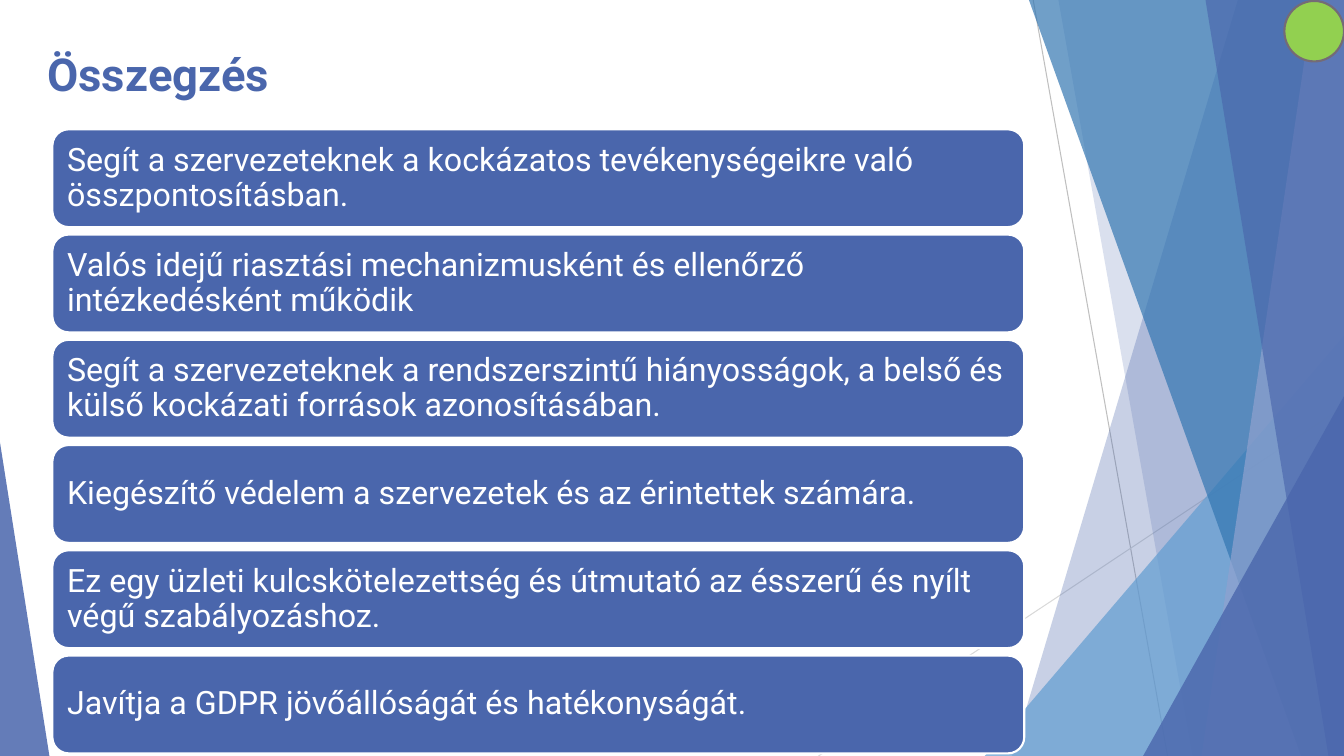
from dataclasses import dataclass
from lxml.etree import SubElement
from pptx import Presentation
from pptx.dml.color import RGBColor
from pptx.enum.shapes import MSO_CONNECTOR, MSO_SHAPE
from pptx.enum.text import MSO_ANCHOR, MSO_AUTO_SIZE, PP_ALIGN
from pptx.oxml.ns import qn
from pptx.util import Inches, Pt


@dataclass
class Theme:
    font: str = "Roboto"
    title_size: float = 32.4
    card_size: float = 23
    indigo: str = "4A66AC"
    lavender: str = "90A2CF"
    ocean: str = "3477B2"
    sky: str = "629DD1"
    green: str = "92D050"
    badge_edge: str = "746B76"
    grey: str = "BFBFBF"
    pale_grey: str = "D9D9D9"
    white: str = "FFFFFF"


theme = Theme()

COLUMNS, ROWS = 160, 90
deck = Presentation()
deck.slide_width, deck.slide_height = Inches(40 / 3), Inches(7.5)
cell = deck.slide_width / COLUMNS
slide = deck.slides.add_slide(deck.slide_layouts[5])


def cells(*counts):
    return [round(count * cell) for count in counts]


def write(holder, text, size, color, bold=False, anchor=MSO_ANCHOR.MIDDLE,
          side=1.2, edge=1.2, spacing=1.0):
    frame = holder.text_frame
    frame.word_wrap = True
    frame.auto_size = MSO_AUTO_SIZE.NONE
    frame.vertical_anchor = anchor
    frame.margin_left, frame.margin_right = cells(side, side)
    frame.margin_top, frame.margin_bottom = cells(edge, edge)
    paragraph = frame.paragraphs[0]
    paragraph.alignment = PP_ALIGN.LEFT
    paragraph.line_spacing = spacing
    run = paragraph.add_run()
    run.text = text
    run.font.name = theme.font
    run.font.size = Pt(size)
    run.font.bold = bold
    run.font.color.rgb = RGBColor.from_string(color)


for start, end, color in [
    ((123, 0), (139, ROWS), theme.grey),
    ((COLUMNS, 48.36), (97.44, ROWS), theme.pale_grey),
]:
    ray = slide.shapes.add_connector(
        MSO_CONNECTOR.STRAIGHT, *cells(*start, *end))
    ray.line.color.rgb = RGBColor.from_string(color)
    ray.line.width = Pt(0.75)
    SubElement(ray._element.spPr, qn("a:effectLst"))

bands = [
    ("band", 147.36, 120.48, theme.indigo, 30),
    ("band", 126, 141.96, theme.indigo, 20),
    ("right", 117.24, 39.96, theme.sky, 72),
    ("band", 122.5, 154.9, theme.ocean, 70),
    ("band", 156.36, 143.04, theme.lavender, 70),
    ("band", 143.52, 158.16, theme.indigo, 65),
    ("right", 136.08, 47.16, theme.indigo, 80),
    ("left", 5.88, 52.68, theme.indigo, 85),
]
for kind, first, second, color, opacity in bands:
    if kind == "band":
        outline = slide.shapes.build_freeform(*cells(first, 0))
        outline.add_line_segments(
            [cells(COLUMNS, 0), cells(COLUMNS, ROWS), cells(second, ROWS)])
        facet = outline.convert_to_shape()
    else:
        left, right = (first, COLUMNS) if kind == "right" else (0, first)
        facet = slide.shapes.add_shape(
            MSO_SHAPE.ISOSCELES_TRIANGLE,
            *cells(left, second, right - left, ROWS - second))
        facet.adjustments[0] = 1 if kind == "right" else 0
    facet.shadow.inherit = False
    facet.line.fill.background()
    facet.fill.solid()
    facet.fill.fore_color.rgb = RGBColor.from_string(color)
    tint = facet._element.spPr.find(qn("a:solidFill"))[0]
    SubElement(tint, qn("a:alpha"), val=str(opacity * 1000))

heading = slide.shapes.title
heading.left, heading.top, heading.width, heading.height = cells(
    4.44, 4.92, 112.8, 10.08)
write(heading, "Összegzés", theme.title_size, theme.indigo, bold=True,
      anchor=MSO_ANCHOR.TOP, edge=0.6)

badge = slide.shapes.add_shape(MSO_SHAPE.OVAL, *cells(152.9, 0.12, 7.1, 7.2))
badge.shadow.inherit = False
badge.fill.solid()
badge.fill.fore_color.rgb = RGBColor.from_string(theme.green)
badge.line.color.rgb = RGBColor.from_string(theme.badge_edge)
badge.line.width = Pt(1.5)

conclusions = [
    "Segít a szervezeteknek a kockázatos tevékenységeikre való összpontosításban.",
    "Valós idejű riasztási mechanizmusként és ellenőrző intézkedésként működik",
    "Segít a szervezeteknek a rendszerszintű hiányosságok, a belső és külső "
    "kockázati források azonosításában.",
    "Kiegészítő védelem a szervezetek és az érintettek számára.",
    "Ez egy üzleti kulcskötelezettség és útmutató az ésszerű és nyílt végű "
    "szabályozáshoz.",
    "Javítja a GDPR jövőállóságát és hatékonyságát.",
]
card_top, card_pitch = 15.4, 12.53
for index, conclusion in enumerate(conclusions):
    card = slide.shapes.add_shape(
        MSO_SHAPE.ROUNDED_RECTANGLE,
        *cells(6.24, card_top + index * card_pitch, 115.7, 11.64))
    card.shadow.inherit = False
    card.fill.solid()
    card.fill.fore_color.rgb = RGBColor.from_string(theme.indigo)
    card.line.color.rgb = RGBColor.from_string(theme.white)
    card.line.width = Pt(1.5)
    write(card, conclusion, theme.card_size, theme.white, spacing=0.9)

deck.save("out.pptx")
